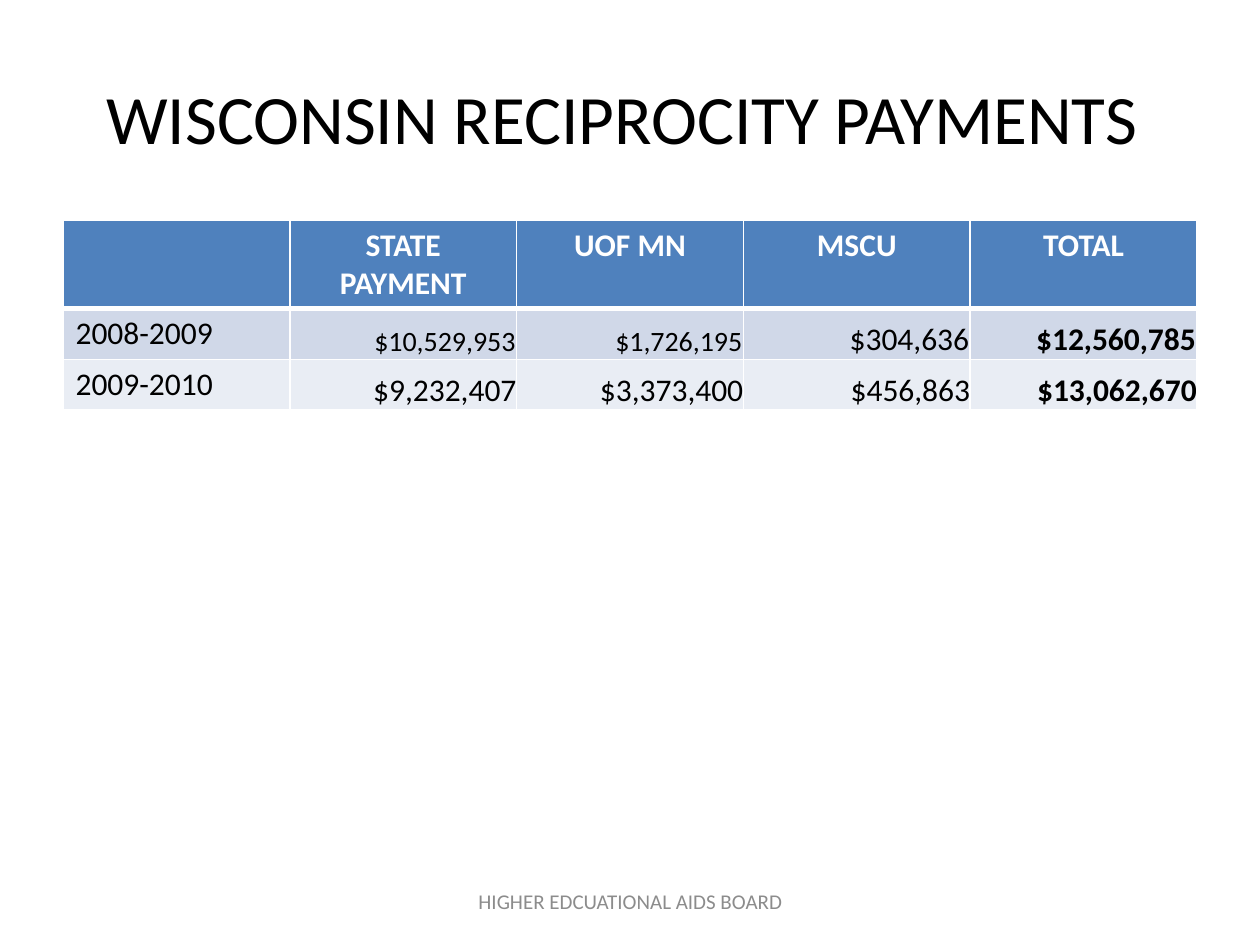
from lxml.etree import SubElement
from pptx import Presentation
from pptx.dml.color import RGBColor
from pptx.enum.text import MSO_ANCHOR as Anchor, PP_ALIGN as Align
from pptx.oxml.ns import qn
from pptx.util import Emu, Pt

WHITE = RGBColor(0xFF, 0xFF, 0xFF)
BLACK = RGBColor(0x00, 0x00, 0x00)
GRAY = RGBColor(0x8C, 0x8C, 0x8C)
HEADER_BLUE = RGBColor(0x4F, 0x81, 0xBD)
BAND_DARK = RGBColor(0xD0, 0xD8, 0xE8)
BAND_LIGHT = RGBColor(0xE9, 0xED, 0xF4)
FILLS = [HEADER_BLUE, BAND_DARK, BAND_LIGHT]

ROWS = [
    ["", "STATE PAYMENT", "UOF MN", "MSCU", "TOTAL"],
    ["2008-2009", "$10,529,953", "$1,726,195", "$304,636", "$12,560,785"],
    ["2009-2010", "$9,232,407", "$3,373,400", "$456,863", "$13,062,670"],
]
ROW_HEIGHTS = [88, 51, 51]
SMALL_CELLS = {(1, 1), (1, 2)}
AMOUNT_MARGINS = {1: 1, 2: 0}


def px(n):
    return Emu(round(n * 914400 / 126))


class Deck:
    """Holds the style and the current slide, and draws its elements."""

    font = "Calibri"

    def __init__(self, prs):
        self.slide = prs.slides.add_slide(prs.slide_layouts[6])

    def style(self, p, size, color, align, bold=False):
        p.alignment = align
        for r in p.runs:
            r.font.name = self.font
            r.font.size = Pt(size)
            r.font.bold = bold
            r.font.color.rgb = color

    def text(self, x, y, w, h, text, size, color):
        sp = self.slide.shapes.add_textbox(px(x), px(y), px(w), px(h))
        tf = sp.text_frame
        tf.word_wrap = True
        tf.vertical_anchor = Anchor.MIDDLE
        tf.text = text
        self.style(tf.paragraphs[0], size, color, Align.CENTER)

    def borders(self, cell, bottom):
        tc_pr = cell._tc.get_or_add_tcPr()
        widths = {"a:lnL": 1, "a:lnR": 1, "a:lnT": 1, "a:lnB": bottom}
        for i, (tag, width) in enumerate(widths.items()):
            ln = SubElement(tc_pr, qn(tag), w=str(Pt(width)))
            tc_pr.insert(i, ln)
            fill = SubElement(ln, qn("a:solidFill"))
            SubElement(fill, qn("a:srgbClr"), val=str(WHITE))

    def cell(self, cell, row, col, text):
        header, amount = row == 0, row > 0 and col > 0
        cell.fill.solid()
        cell.fill.fore_color.rgb = FILLS[row]
        self.borders(cell, 3 if header else 1)
        cell.text = text
        align = Align.CENTER if header else Align.RIGHT if amount else Align.LEFT
        size = 16 if (row, col) in SMALL_CELLS else 18
        color = WHITE if header else BLACK
        self.style(cell.text_frame.paragraphs[0], size, color, align, header or col == 4)
        if amount:
            margin = px(AMOUNT_MARGINS[row])
            cell.vertical_anchor = Anchor.BOTTOM
            cell.margin_left = cell.margin_right = cell.margin_top = margin
            cell.margin_bottom = 0

    def table(self, x, y, w, rows, heights):
        frame = self.slide.shapes.add_table(
            len(rows), len(rows[0]), px(x), px(y), px(w), px(sum(heights)))
        table = frame.table
        for i, (values, height) in enumerate(zip(rows, heights)):
            table.rows[i].height = px(height)
            for j, value in enumerate(values):
                self.cell(table.cell(i, j), i, j, value)


def main():
    prs = Presentation()
    prs.slide_width, prs.slide_height = px(1260), px(945)
    deck = Deck(prs)
    deck.text(63, 38, 1134, 158, "WISCONSIN RECIPROCITY PAYMENTS ", 39.6, BLACK)
    deck.table(63, 220, 1134, ROWS, ROW_HEIGHTS)
    deck.text(431, 876, 399, 50, "HIGHER EDCUATIONAL AIDS BOARD", 12, GRAY)
    prs.save("out.pptx")


if __name__ == "__main__":
    main()
